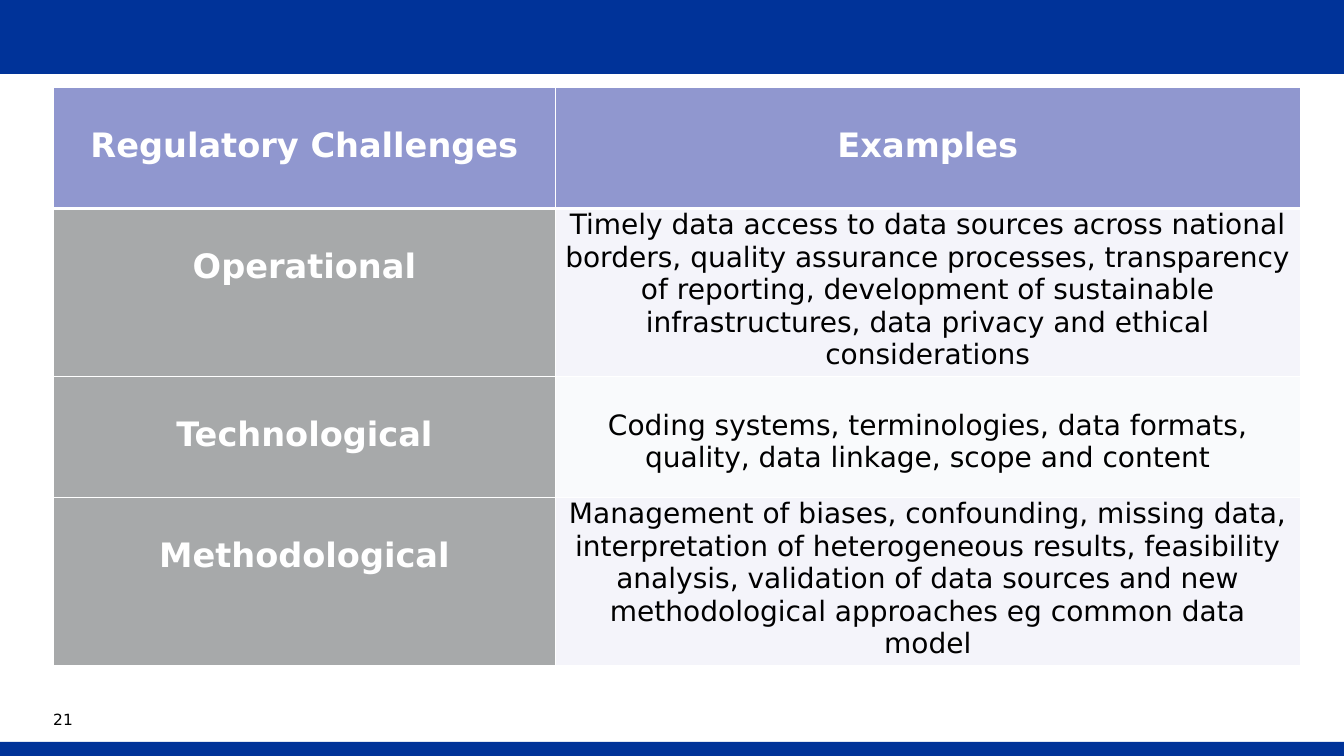
from lxml.etree import SubElement
from pptx import Presentation
from pptx.dml.color import RGBColor as RGB
from pptx.enum.shapes import MSO_CONNECTOR as CONN, MSO_SHAPE as SHAPE
from pptx.enum.text import MSO_ANCHOR as ANCHOR, PP_ALIGN as ALIGN
from pptx.oxml.ns import qn
from pptx.util import Pt

COLORS = {
    "band": "003399", "white": "FFFFFF", "black": "000000",
    "header": "9097CF", "label": "A7A9AA",
    "odd": "F4F4FA", "even": "F9FAFC",
}
HEADERS = ("Regulatory Challenges", "Examples")
CHALLENGES = [
    ("Operational",
     "Timely data access to data sources across national borders, "
     "quality assurance processes, transparency of reporting, "
     "development of sustainable infrastructures, data privacy and "
     "ethical considerations", 120, 0),
    ("Technological",
     "Coding systems, terminologies, data formats, quality, "
     "data linkage, scope and content", 86.4, 23.2),
    ("Methodological",
     "Management of biases, confounding, missing data, interpretation "
     "of heterogeneous results, feasibility analysis, validation of "
     "data sources and new methodological approaches eg common data "
     "model", 120, 0),
]
HEADER_HEIGHT, HEADING_TOP = 86.4, 28
HEADING = {"size": Pt(24), "bold": True}
BODY = {"size": Pt(20), "bold": False}


class Deck:
    font = "DejaVu Sans"

    def __init__(self, prs):
        self.slide = prs.slides.add_slide(prs.slide_layouts[6])

    def color(self, key):
        return RGB.from_string(COLORS[key])

    def rect(self, x, y, w, h, fill):
        sp = self.slide.shapes.add_shape(
            SHAPE.RECTANGLE, Pt(x), Pt(y), Pt(w), Pt(h))
        sp.shadow.inherit = False
        sp.fill.solid()
        sp.fill.fore_color.rgb = self.color(fill)
        sp.line.fill.background()

    def line(self, x1, y1, x2, y2, color, width):
        cx = self.slide.shapes.add_connector(
            CONN.STRAIGHT, Pt(x1), Pt(y1), Pt(x2), Pt(y2))
        cx.line.color.rgb = self.color(color)
        cx.line.width = Pt(width)
        SubElement(cx._element.spPr, qn("a:effectLst"))

    def add_run(self, tf, text, color, style):
        p = tf.paragraphs[0]
        r = p.add_run()
        r.text = text
        for name, value in {"name": self.font, **style}.items():
            setattr(r.font, name, value)
        r.font.color.rgb = self.color(color)
        return p

    def text(self, x, y, w, h, text, color, style, spacing):
        tf = self.slide.shapes.add_textbox(
            Pt(x), Pt(y), Pt(w), Pt(h)).text_frame
        tf.word_wrap = True
        for side in ("left", "top", "right", "bottom"):
            setattr(tf, f"margin_{side}", 0)
        self.add_run(tf, text, color, style).line_spacing = Pt(spacing)

    def table(self, x, y, widths, heights):
        table = self.slide.shapes.add_table(
            len(heights), len(widths), Pt(x), Pt(y),
            Pt(sum(widths)), Pt(sum(heights))).table
        for col, width in zip(table.columns, widths):
            col.width = Pt(width)
        for row, height in zip(table.rows, heights):
            row.height = Pt(height)
        return table

    def cell(self, cell, text, color, fill, style, top, edges):
        margins = {"left": 5, "top": top, "right": 5, "bottom": 0}
        for side, margin in margins.items():
            setattr(cell, f"margin_{side}", Pt(margin))
        cell.vertical_anchor = ANCHOR.TOP
        p = self.add_run(cell.text_frame, text, color, style)
        p.alignment = ALIGN.CENTER
        pr = cell._tc.get_or_add_tcPr()
        for side, width in zip("LRTB", edges):
            ln = SubElement(pr, qn(f"a:ln{side}"), w=str(Pt(width)))
            solid = SubElement(ln, qn("a:solidFill"))
            SubElement(solid, qn("a:srgbClr"), val=COLORS["white"])
        cell.fill.solid()
        cell.fill.fore_color.rgb = self.color(fill)


def main():
    prs = Presentation()
    prs.slide_width, prs.slide_height = Pt(960), Pt(540)
    deck = Deck(prs)
    deck.rect(0, 0, 960, 53, "band")
    deck.line(0, 53, 960, 53, "white", 0.25)
    deck.rect(0, 530, 960, 10, "band")
    deck.text(38, 504.5, 32, 19, "21", "black", {"size": Pt(11)}, 16)

    heights = [HEADER_HEIGHT] + [height for _, _, height, _ in CHALLENGES]
    table = deck.table(38.2, 62.5, [358.5, 532], heights)
    for col, title in enumerate(HEADERS):
        deck.cell(table.cell(0, col), title, "white", "header",
                  HEADING, HEADING_TOP, (1, 1, 1, 3))
    for row, (label, examples, _, top) in enumerate(CHALLENGES, 1):
        edges = (1, 1, 3 if row == 1 else 1, 1)
        deck.cell(table.cell(row, 0), label, "white", "label",
                  HEADING, HEADING_TOP, edges)
        deck.cell(table.cell(row, 1), examples, "black",
                  "odd" if row % 2 else "even", BODY, top, edges)
    prs.save("out.pptx")


if __name__ == "__main__":
    main()
